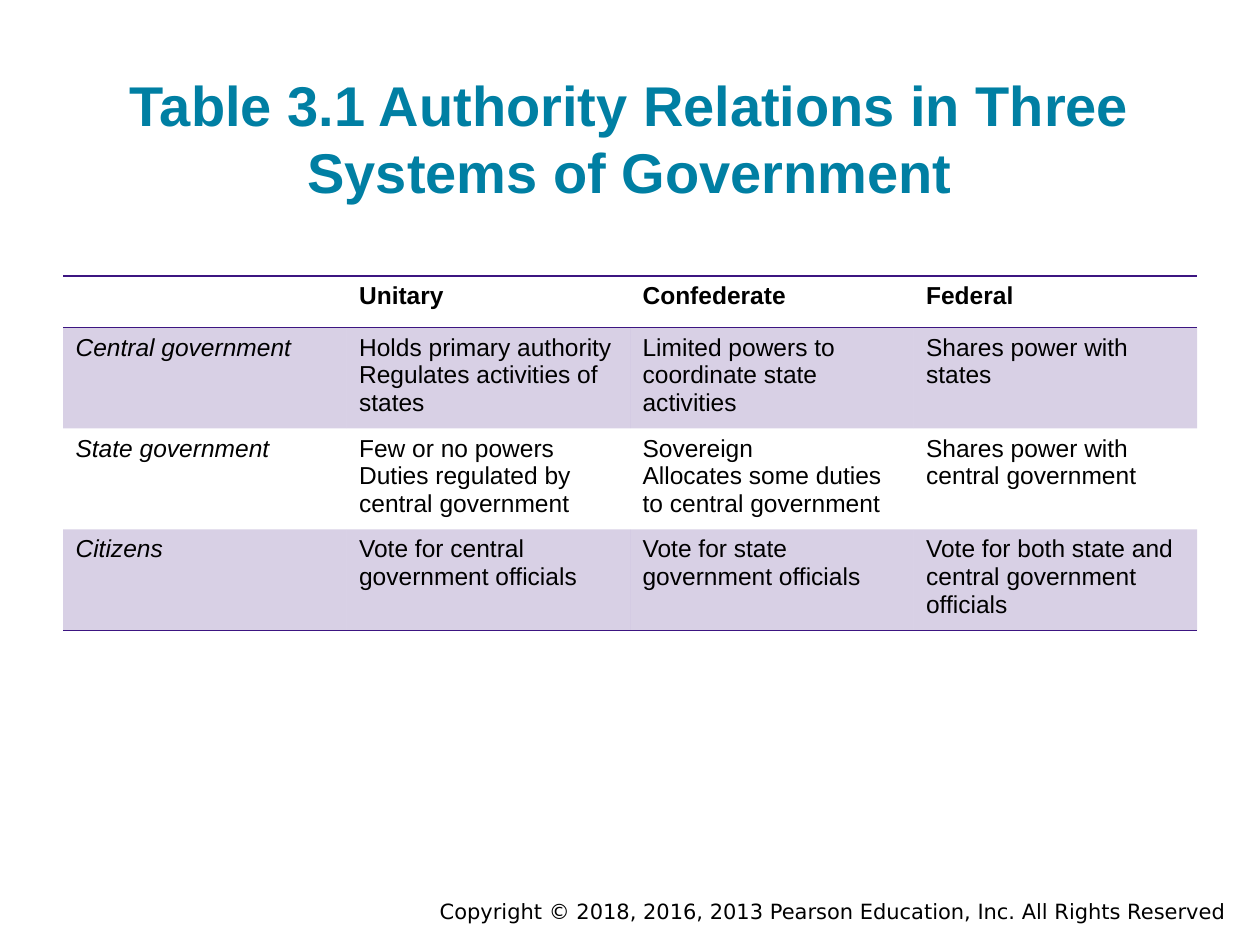
from pptx import Presentation
from pptx.dml.color import RGBColor
from pptx.enum.text import MSO_ANCHOR as Anchor, PP_ALIGN as Align
from pptx.oxml import parse_xml
from pptx.oxml.ns import nsdecls, qn
from pptx.util import Inches, Pt
from lxml.etree import SubElement

TITLE = "Table 3.1 Authority Relations in Three Systems of Government"
RIGHTS = "Copyright © 2018, 2016, 2013 Pearson Education, Inc. All Rights Reserved"
ROWS = [
    ("", "Unitary", "Confederate", "Federal"),
    ("Central government",
     "Holds primary authority Regulates activities of states",
     "Limited powers to coordinate state activities",
     "Shares power with states"),
    ("State government",
     "Few or no powers\nDuties regulated by central government",
     "Sovereign\nAllocates some duties to central government",
     "Shares power with central government"),
    ("Citizens",
     "Vote for central government officials",
     "Vote for state government officials",
     "Vote for both state and central government officials"),
]
PURPLE = "3C1581"
PLAIN = "{2D5ABB26-0587-4C30-8999-92F81FD0307C}"
HEAD = dict(name="Arial", size=Pt(32), bold=True)
NOTE = dict(name="DejaVu Sans", size=Pt(12))
BODY = dict(name="Arial", size=Pt(14))


def color(text):
    return RGBColor.from_string(text)


def write(frame, text, look, ink="000000", align=Align.LEFT):
    frame.text = text
    for para in frame.paragraphs:
        para.alignment = align
        for key, val in look.items():
            setattr(para.font, key, val)
        para.font.color.rgb = color(ink)


def add_text(slide, box, text, look, ink, align, anchor, pad):
    frame = slide.shapes.add_textbox(*map(Inches, box)).text_frame
    frame.word_wrap = True
    frame.vertical_anchor = anchor
    frame.margin_top = frame.margin_bottom = Inches(pad)
    write(frame, text, look, ink, align)


def rule(cell, sides):
    props = cell._tc.get_or_add_tcPr()
    for spot, side in enumerate(sides):
        line = parse_xml(
            f'<a:ln{side} {nsdecls("a")} w="{Pt(1)}"><a:solidFill>'
            f'<a:srgbClr val="{PURPLE}"/></a:solidFill></a:ln{side}>')
        props.insert(spot, line)


def shade(cell):
    cell.fill.solid()
    cell.fill.fore_color.rgb = color(PURPLE)
    tint = cell._tc.tcPr.find(".//" + qn("a:srgbClr"))
    SubElement(tint, qn("a:alpha"), val="20000")


def add_grid(slide):
    count = len(ROWS)
    box = map(Inches, (0.5, 2.19, 9, 0.41 * count))
    table = slide.shapes.add_table(count, len(ROWS[0]), *box).table
    table._tbl.tblPr.find(qn("a:tableStyleId")).text = PLAIN
    edges = {0: "TB", count - 1: "B"}
    for r, row in enumerate(ROWS):
        for c, text in enumerate(row):
            cell = table.cell(r, c)
            look = dict(BODY, bold=r == 0, italic=r > 0 and c == 0)
            write(cell.text_frame, text, look)
            if r % 2:
                shade(cell)
            else:
                cell.fill.background()
            rule(cell, edges.get(r, ""))


def main():
    deck = Presentation()
    deck.slide_width, deck.slide_height = Inches(10), Inches(7.5)
    slide = deck.slides.add_slide(deck.slide_layouts[6])
    add_text(slide, (2, 7.08, 7.83, 0.3), RIGHTS, NOTE, "000000",
             Align.RIGHT, Anchor.TOP, 0.05)
    add_text(slide, (0.5, 0.39, 9, 1.4), TITLE, HEAD, "007FA3",
             Align.CENTER, Anchor.MIDDLE, 0.1)
    add_grid(slide)
    deck.save("out.pptx")


if __name__ == "__main__":
    main()
